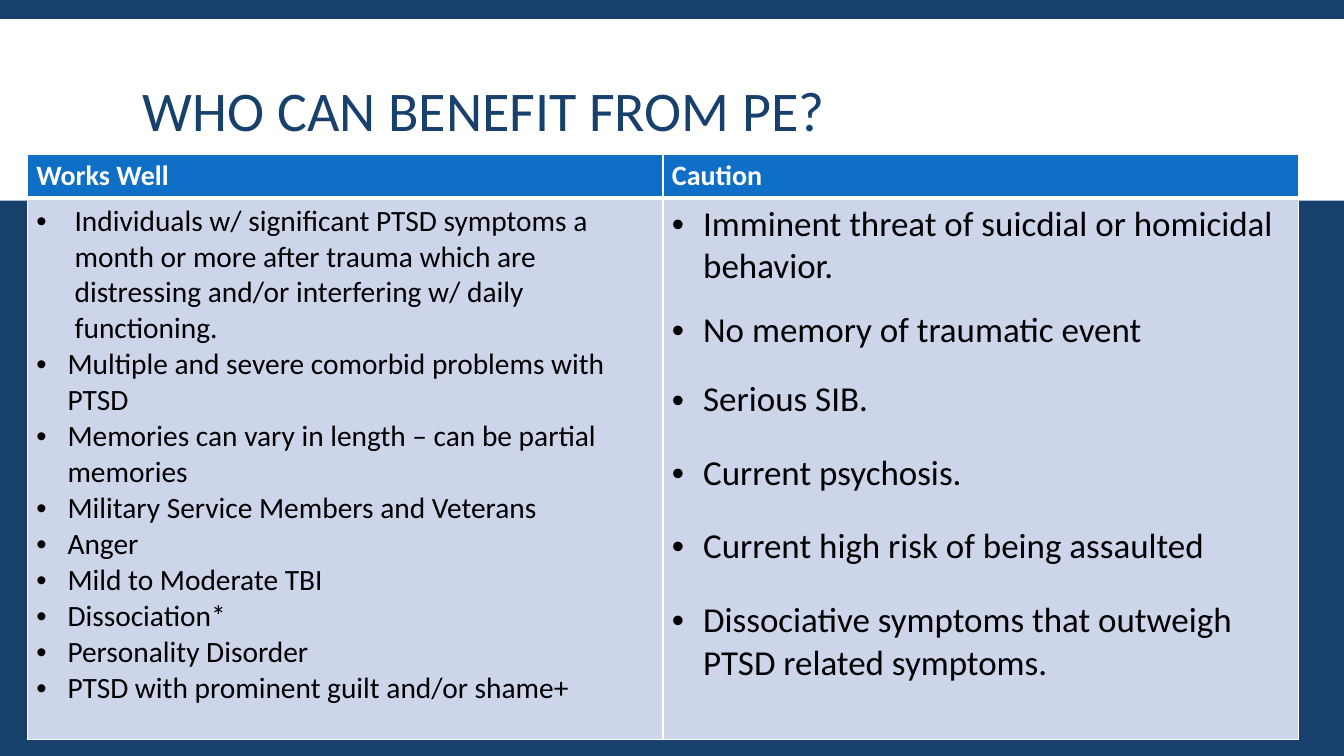
import pptx
import pptx.dml.color
import pptx.enum.shapes
import pptx.enum.text
import pptx.oxml
import pptx.oxml.ns
import pptx.util
from pptx.util import Inches

NAVY = pptx.dml.color.RGBColor(0x17, 0x40, 0x6D)
BLUE = pptx.dml.color.RGBColor(0x0F, 0x6F, 0xC6)
PALE = pptx.dml.color.RGBColor(0xCC, 0xD5, 0xEA)
WHITE = pptx.dml.color.RGBColor(0xFF, 0xFF, 0xFF)
BLACK = pptx.dml.color.RGBColor(0, 0, 0)
FONT = "Calibri"

HEADINGS = ["Works Well", "Caution"]
WORKS_WELL = [
    "Individuals w/ significant PTSD symptoms a month or more after trauma "
    "which are distressing and/or interfering w/ daily functioning.",
    "Multiple and severe comorbid problems with PTSD",
    "Memories can vary in length – can be partial memories",
    "Military Service Members and Veterans",
    "Anger",
    "Mild to Moderate TBI",
    "Dissociation*",
    "Personality Disorder",
    "PTSD with prominent guilt and/or shame+",
]
CAUTION = [
    "Imminent threat of suicdial or homicidal behavior.",
    "No memory of traumatic event",
    "Serious SIB.",
    "Current psychosis.",
    "Current high risk of being assaulted",
    "Dissociative symptoms that outweigh PTSD related symptoms.",
]
CAUTION_GAPS = [0, 14.6, 19.5, 22, 22, 22]


def format_runs(paragraph, size, color, bold=False):
    for run in paragraph.runs:
        run.font.name = FONT
        run.font.size = pptx.util.Pt(size)
        run.font.color.rgb = color
        run.font.bold = bold


def add_bullet(paragraph, indent):
    properties = paragraph._p.get_or_add_pPr()
    properties.set("marL", str(Inches(indent)))
    properties.set("indent", str(-Inches(indent)))
    namespace = pptx.oxml.ns.nsdecls("a")
    properties.append(pptx.oxml.parse_xml(f'<a:buFont {namespace} typeface="Arial"/>'))
    properties.append(pptx.oxml.parse_xml(f'<a:buChar {namespace} char="•"/>'))


def set_borders(cell, top, bottom):
    properties = cell._tc.get_or_add_tcPr()
    sides = [("lnL", 1), ("lnR", 1), ("lnT", top), ("lnB", bottom)]
    # Borders must precede the fill in the cell properties
    for position, (side, width) in enumerate(sides):
        properties.insert(position, pptx.oxml.parse_xml(
            f'<a:{side} {pptx.oxml.ns.nsdecls("a")} w="{pptx.util.Pt(width)}">'
            f'<a:solidFill><a:srgbClr val="{WHITE}"/></a:solidFill></a:{side}>'))


def style_cell(cell, color, top, bottom):
    cell.fill.solid()
    cell.fill.fore_color.rgb = color
    cell.margin_left = cell.margin_right = Inches(0.09)
    cell.margin_top = cell.margin_bottom = Inches(0.05)
    set_borders(cell, top, bottom)


def fill_list(cell, items, size, indents, gaps):
    cell.text_frame.text = "\n".join(items)
    for paragraph, indent, gap in zip(cell.text_frame.paragraphs, indents, gaps):
        paragraph.space_before = pptx.util.Pt(gap)
        add_bullet(paragraph, indent)
        format_runs(paragraph, size, BLACK)


def add_title(slide, left, top, width, height):
    # White band across the slide
    band = slide.shapes.add_shape(
        pptx.enum.shapes.MSO_SHAPE.RECTANGLE,
        Inches(left), Inches(top), Inches(width), Inches(height))
    band.shadow.inherit = False
    band.fill.solid()
    band.fill.fore_color.rgb = WHITE
    band.line.fill.background()

    # Title text
    title = slide.shapes.add_textbox(
        Inches(left + 1.32), Inches(top + 0.12), Inches(10.7), Inches(1.65))
    text_frame = title.text_frame
    text_frame.word_wrap = True
    text_frame.vertical_anchor = pptx.enum.text.MSO_ANCHOR.MIDDLE
    text_frame.text = "WHO CAN BENEFIT FROM PE?"
    text_frame.paragraphs[0].line_spacing = 0.85
    format_runs(text_frame.paragraphs[0], 40, NAVY)


def add_comparison(slide, left, top, width, height):
    table = slide.shapes.add_table(
        2, 2, Inches(left), Inches(top), Inches(width), Inches(height)).table
    header_height = 0.42
    table.rows[0].height = Inches(header_height)
    table.rows[1].height = Inches(height - header_height)

    # Header row
    for column, heading in enumerate(HEADINGS):
        cell = table.cell(0, column)
        style_cell(cell, BLUE, top=1, bottom=3)
        cell.text_frame.text = heading
        format_runs(cell.text_frame.paragraphs[0], 20, WHITE, bold=True)
        style_cell(table.cell(1, column), PALE, top=3, bottom=1)

    # Bulleted lists
    fill_list(table.cell(1, 0), WORKS_WELL, 21,
              [0.38] + [0.31] * (len(WORKS_WELL) - 1), [0] * len(WORKS_WELL))
    fill_list(table.cell(1, 1), CAUTION, 25, [0.31] * len(CAUTION), CAUTION_GAPS)


def main():
    presentation = pptx.Presentation()
    presentation.slide_width = Inches(13.33)
    presentation.slide_height = Inches(7.5)
    slide = presentation.slides.add_slide(presentation.slide_layouts[6])
    slide.background.fill.solid()
    slide.background.fill.fore_color.rgb = NAVY
    add_title(slide, 0, 0.19, 13.33, 1.8)
    add_comparison(slide, 0.27, 1.53, 12.61, 5.79)
    presentation.save("out.pptx")


if __name__ == "__main__":
    main()
